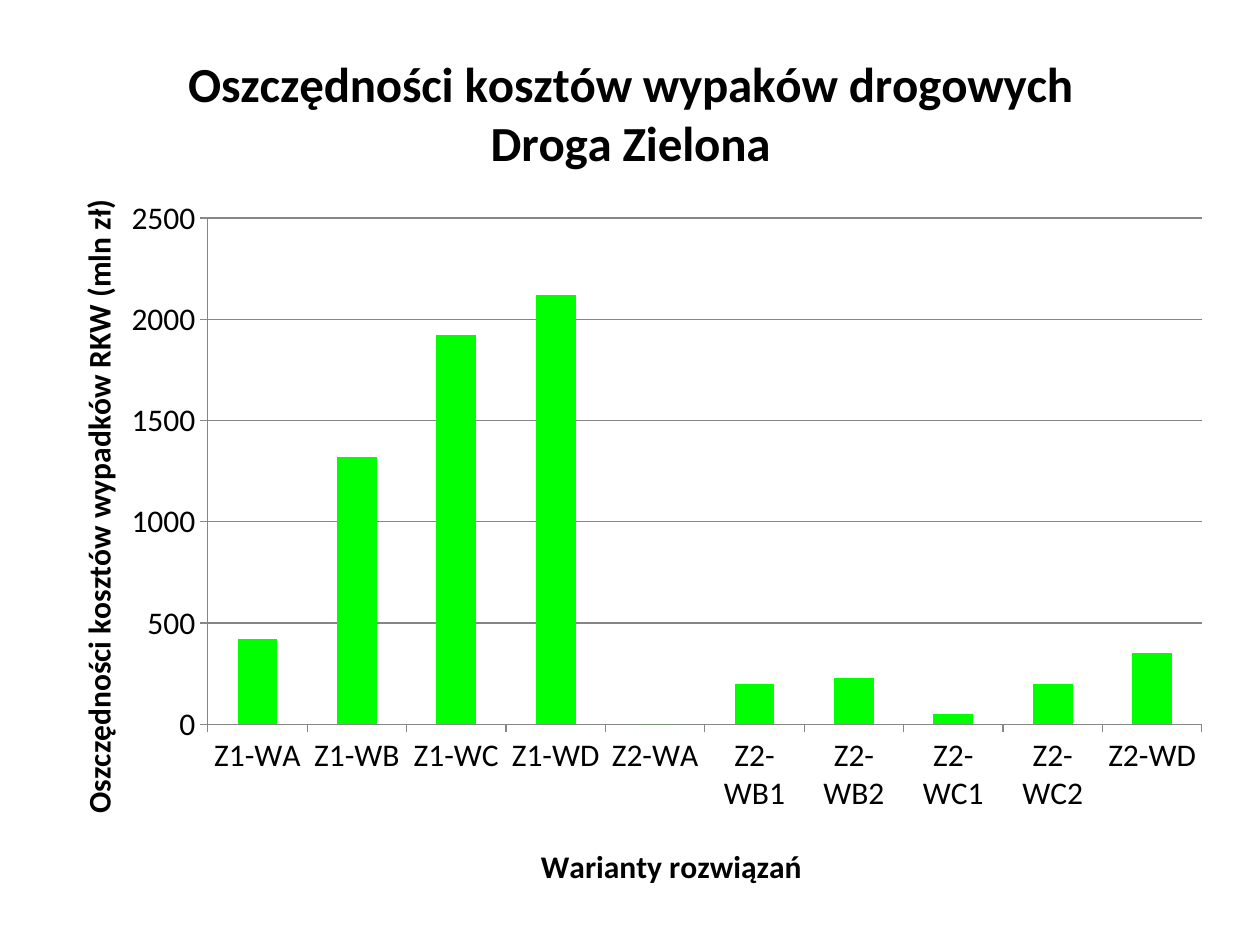
from lxml import etree
from pptx import Presentation
from pptx.chart.data import CategoryChartData
from pptx.dml.color import RGBColor
from pptx.enum.chart import XL_CHART_TYPE, XL_TICK_MARK
from pptx.oxml.ns import qn
from pptx.util import Cm, Pt

COLUMN = XL_CHART_TYPE.COLUMN_CLUSTERED
OUT = XL_TICK_MARK.OUTSIDE
COLORS = {"text": "000000", "line": "868686", "bar": "00FF00"}
COSTS = {
    "Z1-WA": 420, "Z1-WB": 1320, "Z1-WC": 1920, "Z1-WD": 2120, "Z2-WA": 0,
    "Z2-WB1": 200, "Z2-WB2": 230, "Z2-WC1": 50, "Z2-WC2": 200, "Z2-WD": 350,
}


class Deck:
    font = "Calibri"
    size = 18
    head = 28

    def __init__(self, file):
        self.slide = file.slides.add_slide(file.slide_layouts[6])

    def color(self, name):
        return RGBColor.from_string(COLORS[name])

    def style(self, font, size, bold):
        font.name = self.font
        font.size = Pt(size)
        font.bold = bold
        font.color.rgb = self.color("text")

    def title(self, owner, text, size):
        frame = owner.text_frame
        frame.text = text
        for par in frame.paragraphs:
            for run in par.runs:
                self.style(run.font, size, True)

    def line(self, form):
        form.line.color.rgb = self.color("line")
        form.line.width = Pt(0.75)

    def axis(self, axis, text):
        axis.has_title = True
        self.title(axis.axis_title, text, self.size)
        axis.major_tick_mark = OUT
        self.line(axis.format)

    def place(self, part, index, **spots):
        for old in part.findall(qn("c:layout")):
            part.remove(old)
        frame = etree.Element(qn("c:layout"))
        part.insert(index, frame)
        rule = etree.SubElement(frame, qn("c:manualLayout"))
        if "w" in spots:
            etree.SubElement(rule, qn("c:layoutTarget"), val="inner")
        for key in ("x", "y"):
            etree.SubElement(rule, qn(f"c:{key}Mode"), val="edge")
        for key, value in spots.items():
            etree.SubElement(rule, qn(f"c:{key}"), val=str(value))

    def chart(self, costs, title, across, up, box):
        data = CategoryChartData(number_format="0")
        data.categories = list(costs)
        data.add_series("Series 1", list(costs.values()))
        chart = self.slide.shapes.add_chart(COLUMN, *map(Cm, box), data).chart
        self.style(chart.font, self.size, False)
        chart.has_legend = False
        chart.has_title = True
        self.title(chart.chart_title, title, self.head)
        self.axis(chart.category_axis, across)
        values = chart.value_axis
        self.axis(values, up)
        values.minimum_scale, values.maximum_scale = 0, 2500
        values.major_unit = 500
        values.has_major_gridlines = True
        self.line(values.major_gridlines.format)
        values.tick_labels.number_format = "0"
        values.tick_labels.number_format_is_linked = False

        plot = chart.plots[0]
        plot.gap_width = 150
        plot.vary_by_categories = False
        fill = plot.series[0].format.fill
        fill.solid()
        fill.fore_color.rgb = self.color("bar")

        root = chart.element if hasattr(chart, "element") else chart._chartSpace
        area = root.find(".//" + qn("c:plotArea"))
        self.place(area, 0, x=0.145, y=0.217, w=0.835, h=0.573)
        low, side = area.findall(".//" + qn("c:title"))
        self.place(low, 1, x=0.42, y=0.92)
        self.place(side, 1, x=0.03, y=0.19)


def main():
    file = Presentation()
    file.slide_width, file.slide_height = Cm(25.4), Cm(19.05)
    deck = Deck(file)
    deck.chart(
        COSTS,
        "Oszczędności kosztów wypaków drogowych\nDroga Zielona",
        "Warianty rozwiązań",
        "Oszczędności kosztów wypadków RKW (mln zł)",
        (0.71, 0.53, 24, 17.81),
    )
    file.save("out.pptx")


if __name__ == "__main__":
    main()
